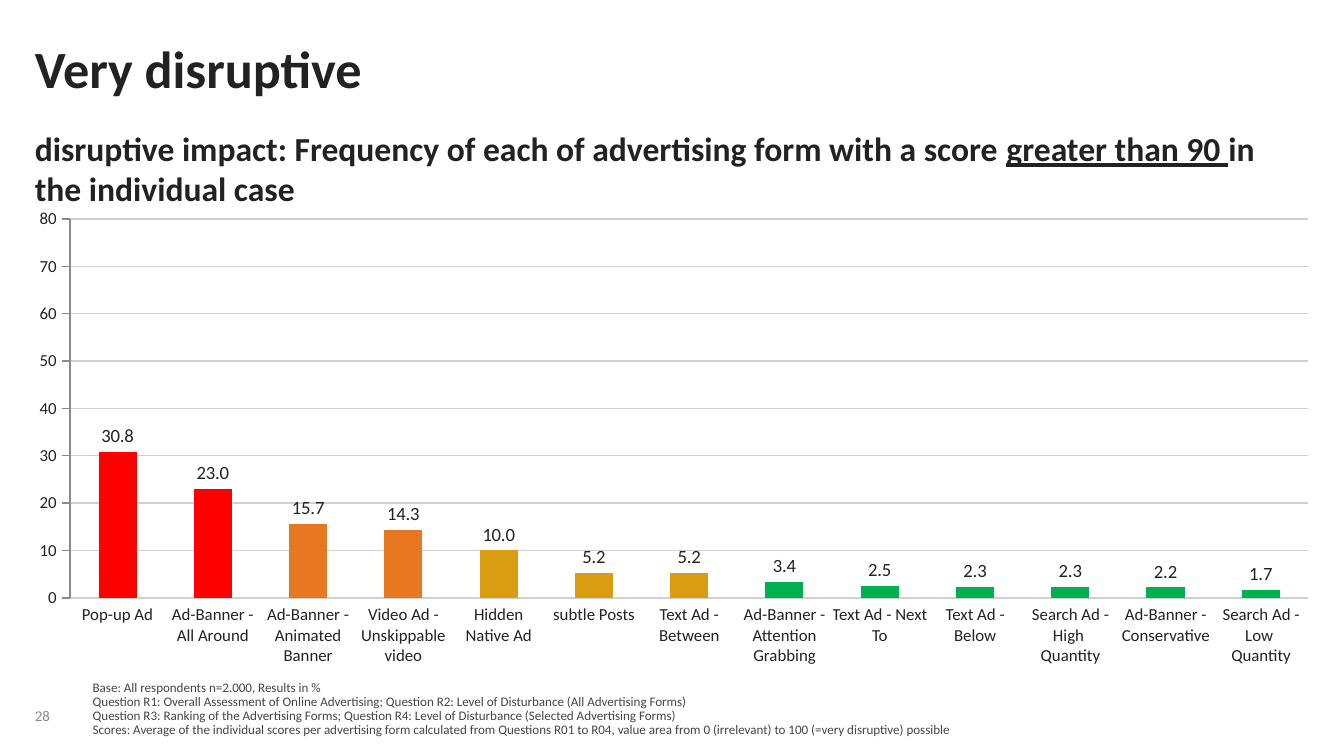
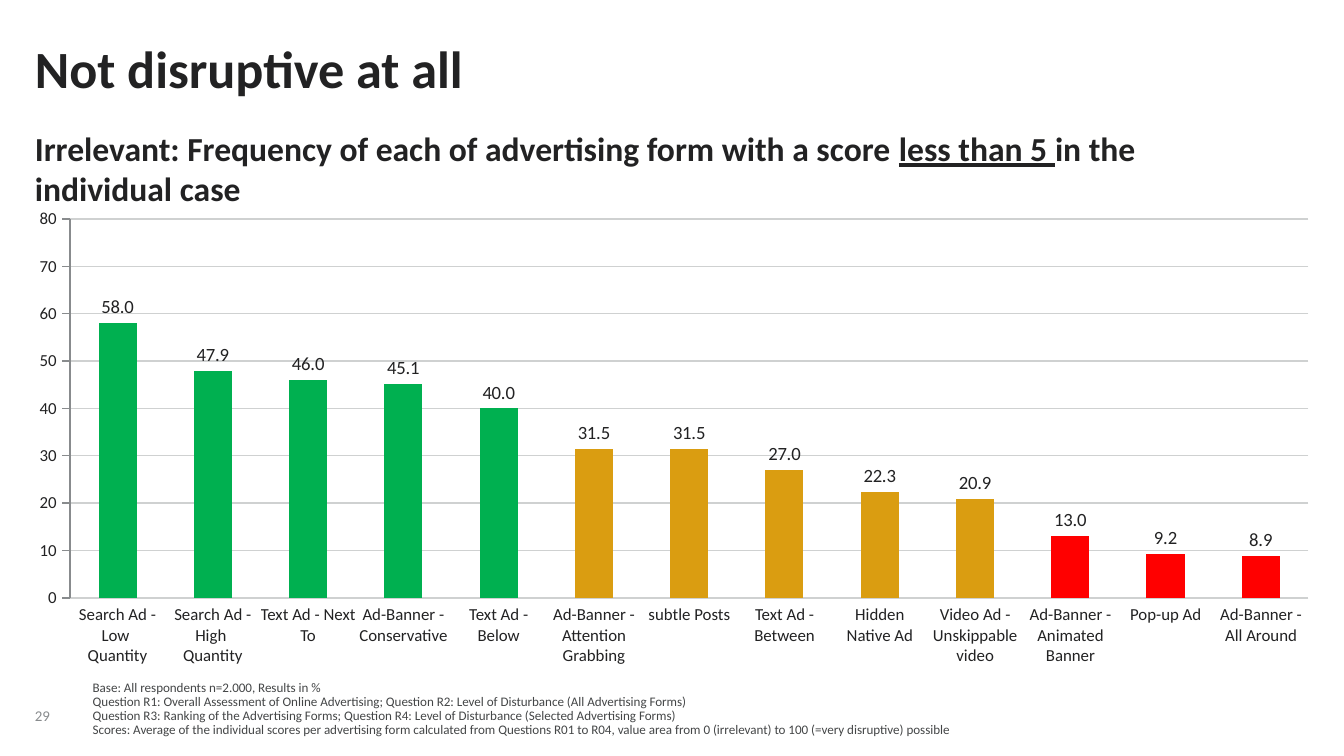
from copy import deepcopy
from dataclasses import dataclass
from typing import Any

from pptx import Presentation
from pptx.chart.data import CategoryChartData
from pptx.dml.color import RGBColor
from pptx.enum.chart import XL_CHART_TYPE, XL_LABEL_POSITION, XL_TICK_LABEL_POSITION, XL_TICK_MARK
from pptx.enum.text import MSO_ANCHOR, PP_ALIGN
from pptx.oxml import parse_xml
from pptx.oxml.ns import nsdecls, qn
from pptx.util import Pt

FONT = "Calibri"
INK, NOTE_GREY, MUTED, GRID = "222223", "444647", "888B8D", "CFD1D1"
RED, ORANGE, OCHRE, GREEN = "FF0000", "E87722", "DA9D11", "00B050"
LEFT = 18.7
NO_MARGINS = dict.fromkeys(("margin_left", "margin_top", "margin_right", "margin_bottom"), 0)


@dataclass(frozen=True)
class Box:
    """Position and size in points."""

    left: float
    top: float
    width: float
    height: float

    def lengths(self) -> tuple[Pt, ...]:
        """Return the four lengths in the order that python-pptx expects."""
        return tuple(Pt(value) for value in (self.left, self.top, self.width, self.height))


@dataclass(frozen=True)
class TextStyle:
    """Character format shared by the runs of a text."""

    size: float
    colour: str = INK
    bold: bool = False


@dataclass(frozen=True)
class AdvertisingForm:
    """An advertising form with its frequency on each slide."""

    label: str
    disruptive: float
    irrelevant: float


@dataclass(frozen=True)
class Page:
    """Content of one slide; bands pair a lowest value with a bar colour."""

    number: int
    title: str
    lead: str
    condition: str
    measure: str
    bands: tuple[tuple[float, str], ...]


TITLE_BOX = Box(LEFT, 19.4, 529.2, 66.2)
SUBTITLE_BOX = Box(LEFT, 68.4, 665.3, 18)
CHART_BOX = Box(LEFT, 95.8, 695.5, 266.4)
LABEL_BOX = Box(37.4, 324, 663.8, 29.5)
FOOTNOTE_BOX = Box(49.7, 365, 482.4, 30.2)
NUMBER_BOX = Box(LEFT, 369.4, 24.5, 18.7)
PLOT_LAYOUT = {"x": 0.027, "y": 0.081, "w": 0.954, "h": 0.762}

TITLE_STYLE = TextStyle(28, bold=True)
SUBTITLE_STYLE = TextStyle(18, bold=True)
LABEL_STYLE = TextStyle(9)
VALUE_STYLE = TextStyle(10)
FOOTNOTE_STYLE = TextStyle(7, NOTE_GREY)
NUMBER_STYLE = TextStyle(8, MUTED)

FOOTNOTES = (
    "Base: All respondents n=2.000, Results in %",
    "Question R1: Overall Assessment of Online Advertising; Question R2: Level of Disturbance (All Advertising Forms)",
    "Question R3: Ranking of the Advertising Forms; Question R4: Level of Disturbance (Selected Advertising Forms)",
    "Scores: Average of the individual scores per advertising form calculated from Questions R01 to R04, "
    "value area from 0 (irrelevant) to 100 (=very disruptive) possible",
)

FORMS = (
    AdvertisingForm("Pop-up Ad", 30.8, 9.2),
    AdvertisingForm("Ad-Banner - All Around", 23.0, 8.9),
    AdvertisingForm("Ad-Banner - Animated Banner", 15.7, 13.0),
    AdvertisingForm("Video Ad - Unskippable video", 14.3, 20.9),
    AdvertisingForm("Hidden Native Ad", 10.0, 22.3),
    AdvertisingForm("Ad-Banner - Attention Grabbing", 3.4, 31.5),
    AdvertisingForm("subtle Posts", 5.2, 31.5),
    AdvertisingForm("Text Ad - Between", 5.2, 27.0),
    AdvertisingForm("Text Ad - Next To", 2.5, 46.0),
    AdvertisingForm("Text Ad - Below", 2.3, 40.0),
    AdvertisingForm("Search Ad - High \nQuantity", 2.3, 47.9),
    AdvertisingForm("Ad-Banner - Conservative", 2.2, 45.1),
    AdvertisingForm("Search Ad - Low \nQuantity", 1.7, 58.0),
)

PAGES = (
    Page(28, "Very disruptive",
         "disruptive impact: Frequency of each of advertising form with a score ",
         "greater than 90 ", "disruptive",
         ((20, RED), (14, ORANGE), (5, OCHRE), (0, GREEN))),
    Page(29, "Not disruptive at all",
         "Irrelevant: Frequency of each of advertising form with a score ",
         "less than 5 ", "irrelevant",
         ((40, GREEN), (20, OCHRE), (0, RED))),
)


def colour(value: str) -> RGBColor:
    """Turn a hex string into a colour."""
    return RGBColor.from_string(value)


def apply(target: Any, values: dict[str, Any]) -> None:
    """Set every attribute named in the format values."""
    for name, value in values.items():
        setattr(target, name, value)


def format_font(font: Any, style: TextStyle) -> None:
    """Give a font the character format of a style."""
    apply(font, {"name": FONT, "size": Pt(style.size), "bold": style.bold})
    font.color.rgb = colour(style.colour)


def paint(fill: Any, value: str) -> None:
    """Fill with one solid colour."""
    fill.solid()
    fill.fore_color.rgb = colour(value)


def format_line(line: Any, value: str) -> None:
    """Draw a thin line in one colour."""
    line.width = Pt(0.75)
    line.color.rgb = colour(value)


def add_text(slide: Any, box: Box, lines: tuple[str, ...], style: TextStyle,
             frame_format: dict[str, Any] | None = None,
             paragraph_format: dict[str, Any] | None = None) -> Any:
    """Add a text box without margins and return its text frame."""
    frame = slide.shapes.add_textbox(*box.lengths()).text_frame
    apply(frame, {**NO_MARGINS, "word_wrap": True, **(frame_format or {})})
    frame.text = "\n".join(lines)
    for paragraph in frame.paragraphs:
        apply(paragraph, paragraph_format or {})
        for run in paragraph.runs:
            format_font(run.font, style)
    return frame


def add_subtitle(slide: Any, page: Page) -> None:
    """Add the subtitle with its condition underlined."""
    frame = add_text(slide, SUBTITLE_BOX, (page.lead,), SUBTITLE_STYLE,
                     paragraph_format={"space_after": Pt(3)})
    for text, underline in ((page.condition, True), ("in the individual case", False)):
        run = frame.paragraphs[0].add_run()
        run.text = text
        format_font(run.font, SUBTITLE_STYLE)
        run.font.underline = underline


def place_plot(chart: Any) -> None:
    """Fix the inner plot area as fractions of the chart."""
    plot_area = chart._chartSpace.chart.plotArea
    for layout in plot_area.findall(qn("c:layout")):
        plot_area.remove(layout)
    modes = "".join(f'<c:{axis}Mode val="edge"/>' for axis in "xy")
    sizes = "".join(f'<c:{name} val="{value}"/>' for name, value in PLOT_LAYOUT.items())
    plot_area.insert(0, parse_xml(
        f'<c:layout {nsdecls("c")}><c:manualLayout><c:layoutTarget val="inner"/>'
        f"{modes}{sizes}</c:manualLayout></c:layout>"))


def add_frequency_chart(slide: Any, values: list[float], bands: tuple[tuple[float, str], ...]) -> None:
    """Add the column chart, with each bar coloured by its band."""
    data = CategoryChartData()
    data.categories = [str(rank) for rank in range(1, len(values) + 1)]
    data.add_series("Series 1", values)
    chart = slide.shapes.add_chart(XL_CHART_TYPE.COLUMN_CLUSTERED, *CHART_BOX.lengths(), data).chart
    apply(chart, {"has_legend": False, "has_title": False})
    format_font(chart.font, VALUE_STYLE)
    place_plot(chart)

    chart.category_axis.visible = False
    axis = chart.value_axis
    apply(axis, {"minimum_scale": 0, "maximum_scale": 80, "major_unit": 10,
                 "has_major_gridlines": True, "major_tick_mark": XL_TICK_MARK.OUTSIDE,
                 "minor_tick_mark": XL_TICK_MARK.NONE,
                 "tick_label_position": XL_TICK_LABEL_POSITION.NEXT_TO_AXIS})
    apply(axis.tick_labels, {"number_format": "0", "number_format_is_linked": False})
    format_font(axis.tick_labels.font, LABEL_STYLE)
    format_line(axis.format.line, MUTED)
    format_line(axis.major_gridlines.format.line, GRID)

    plot = chart.plots[0]
    apply(plot, {"gap_width": 150, "vary_by_categories": False, "has_data_labels": True})
    apply(plot.data_labels, {"show_value": True, "number_format": "0.0",
                             "number_format_is_linked": False,
                             "position": XL_LABEL_POSITION.OUTSIDE_END})
    format_font(plot.data_labels.font, VALUE_STYLE)
    series = plot.series[0]
    paint(series.format.fill, GREEN)
    for index, value in enumerate(values):
        band_colour = next(shade for floor, shade in bands if value >= floor)
        if band_colour != GREEN:
            paint(series.points[index].format.fill, band_colour)


def add_label_table(slide: Any, labels: list[str]) -> None:
    """Add a one-row table that names the bars above it."""
    table = slide.shapes.add_table(1, len(labels), *LABEL_BOX.lengths()).table
    apply(table, {"first_row": False, "horz_banding": False})
    for column, cell, label in zip(table.columns, table.rows[0].cells, labels):
        column.width = Pt(LABEL_BOX.width / len(labels))
        apply(cell, NO_MARGINS)
        cell.fill.background()
        paragraph = cell.text_frame.paragraphs[0]
        apply(paragraph, {"text": label, "alignment": PP_ALIGN.CENTER})
        for run in paragraph.runs:
            format_font(run.font, LABEL_STYLE)
        for line_break in paragraph._p.findall(qn("a:br")):
            line_break.append(deepcopy(paragraph.runs[0]._r.rPr))


def add_page(presentation: Any, page: Page) -> None:
    """Add one slide with its chart, labels and notes."""
    slide = presentation.slides.add_slide(presentation.slide_layouts[6])
    forms = sorted(FORMS, key=lambda form: getattr(form, page.measure), reverse=True)
    bottom = {"vertical_anchor": MSO_ANCHOR.BOTTOM}
    add_text(slide, NUMBER_BOX, (str(page.number),), NUMBER_STYLE,
             {**bottom, "word_wrap": False}, {"line_spacing": 0.85})
    add_frequency_chart(slide, [getattr(form, page.measure) for form in forms], page.bands)
    add_text(slide, TITLE_BOX, (page.title,), TITLE_STYLE)
    add_subtitle(slide, page)
    add_text(slide, FOOTNOTE_BOX, FOOTNOTES, FOOTNOTE_STYLE, bottom, {"line_spacing": 0.9})
    add_label_table(slide, [form.label for form in forms])


def main() -> None:
    """Build and save the presentation."""
    presentation = Presentation()
    apply(presentation, {"slide_width": Pt(720), "slide_height": Pt(405)})
    for page in PAGES:
        add_page(presentation, page)
    presentation.save("out.pptx")


if __name__ == "__main__":
    main()
